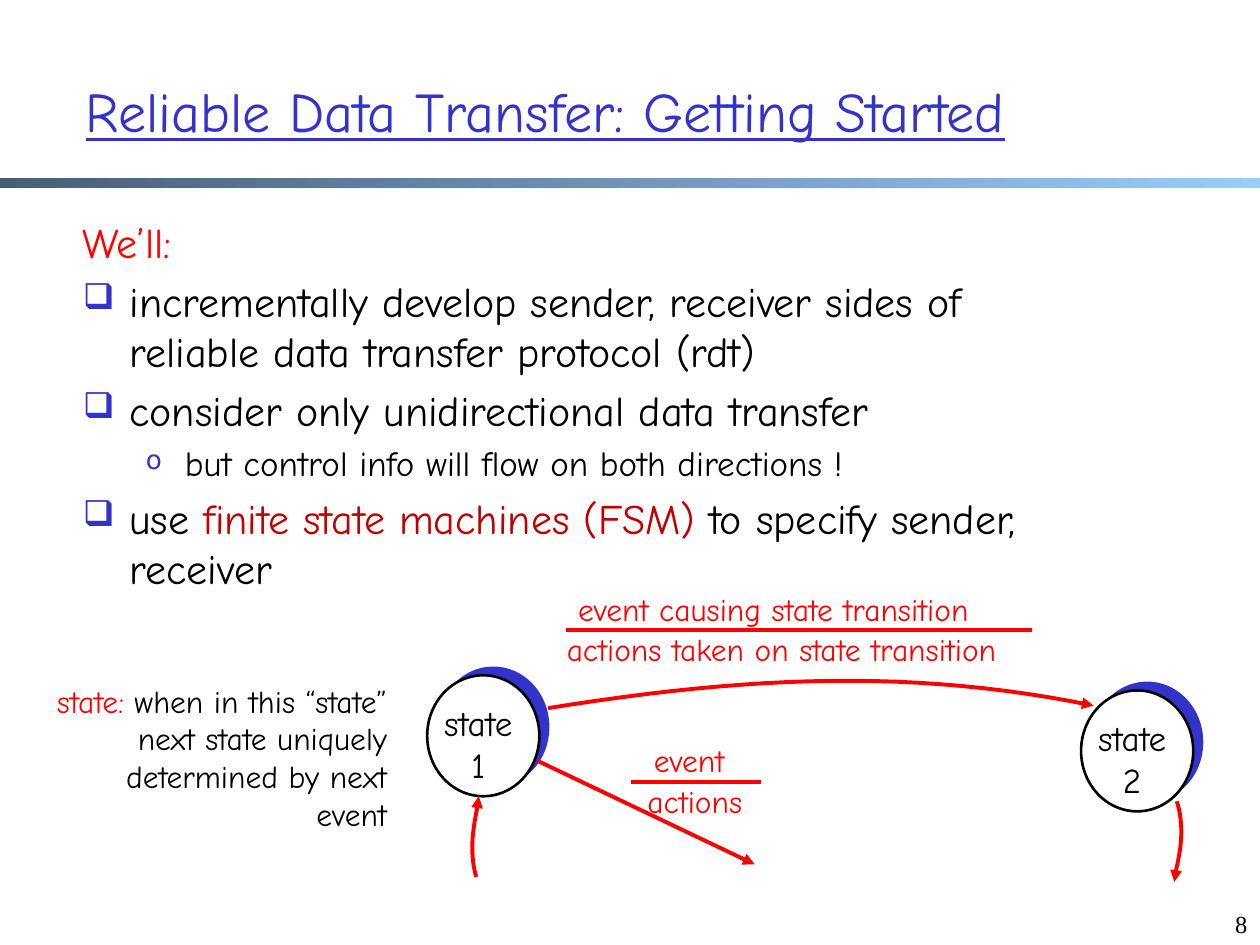
"""Builds the slide that introduces finite state machines for reliable data transfer."""
from lxml import etree
from pptx import Presentation
from pptx.dml.color import RGBColor
from pptx.enum.shapes import MSO_CONNECTOR, MSO_SHAPE
from pptx.enum.text import MSO_ANCHOR, MSO_AUTO_SIZE, PP_ALIGN
from pptx.oxml.ns import qn
from pptx.util import Inches, Pt

LEFT, CENTER, RIGHT = PP_ALIGN.LEFT, PP_ALIGN.CENTER, PP_ALIGN.RIGHT
TOP, MIDDLE, BOTTOM = MSO_ANCHOR.TOP, MSO_ANCHOR.MIDDLE, MSO_ANCHOR.BOTTOM
OVAL, RECT = MSO_SHAPE.OVAL, MSO_SHAPE.RECTANGLE
STRAIGHT = MSO_CONNECTOR.STRAIGHT
NO_FIT = MSO_AUTO_SIZE.NONE
FONT = "Comic Neue"
BLUE, RED, DARK_RED, BLACK, WHITE = "3333CC", "FF0000", "C00000", "000000", "FFFFFF"
color = RGBColor.from_string

prs = Presentation()
prs.slide_width, prs.slide_height = Inches(10), Inches(7.5)
col = row = prs.slide_width / 100
s = prs.slides.add_slide(prs.slide_layouts[5])


def write(sp, box, lines, size, align=LEFT, anchor=TOP, wrap=True, font=FONT):
    """Places a text shape and fills it with lines of (text, colour) runs."""
    sp.left, sp.top, sp.width, sp.height = [int(v * col) for v in box]
    tf = sp.text_frame
    tf.auto_size, tf.word_wrap, tf.vertical_anchor = NO_FIT, wrap, anchor
    for i, runs in enumerate(lines):
        p = tf.add_paragraph() if i else tf.paragraphs[0]
        p.alignment = align
        for text, hue in runs:
            r = p.add_run()
            r.text = text
            r.font.name, r.font.size = font, Pt(size)
            r.font.color.rgb = color(hue)
    return tf


def stroke(sp, arrow):
    """Gives a line its red pen, without shadow, and an optional arrowhead."""
    sp.line.color.rgb = color(RED)
    sp.line.width = Pt(2.25)
    if arrow:
        etree.SubElement(sp.line._ln, qn("a:tailEnd"), type="triangle")
    etree.SubElement(sp._element.spPr, qn("a:effectLst"))


bar = s.shapes.add_shape(RECT, 0, int(14.1 * row), prs.slide_width, int(0.8 * row))
bar.shadow.inherit = False
bar.line.fill.background()
bar.fill.gradient()
bar.fill.gradient_angle = 0
for stop, hue, position in zip(bar.fill.gradient_stops, ("475E76", "99CCFF"), (0, 1)):
    stop.color.rgb = color(hue)
    stop.position = position

tf = write(s.shapes.title, (5.8, 2.5, 85, 12.5),
           [[("Reliable Data Transfer: Getting Started", BLUE)]], 32, anchor=MIDDLE)
tf.paragraphs[0].runs[0].font.underline = True

write(s.shapes.add_textbox(0, 0, 0, 0), (76.7, 70, 23.3, 5), [[("8", BLACK)]], 14,
      RIGHT, BOTTOM, font="Times New Roman")

body = [
    [("We’ll:", RED)],
    [("incrementally develop sender, receiver sides of reliable data transfer protocol (rdt)", BLACK)],
    [("consider only unidirectional data transfer", BLACK)],
    [("but control info will flow on both directions !", BLACK)],
    [("use ", BLACK), ("finite state machines (FSM)", DARK_RED), (" to specify sender, receiver", BLACK)],
]
tf = write(s.shapes.add_textbox(0, 0, 0, 0), (5.6, 16.7, 79.4, 36.7), body, 24)
square, circle = ("❑", 85, 0.37, 0.37, 24), ("o", 75, 0.81, 0.31, 20)
plain = ("",) + square[1:]
for p, style in zip(tf.paragraphs, (plain, square, square, circle, square)):
    mark, percent, margin, hang, size = style
    p.space_before = Pt(size * 0.2)
    for r in p.runs:
        r.font.size = Pt(size)
    pPr = p._p.get_or_add_pPr()
    pPr.set("marL", str(Inches(margin)))
    pPr.set("indent", str(-Inches(hang)))
    if mark:
        etree.SubElement(etree.SubElement(pPr, qn("a:buClr")), qn("a:srgbClr"), val=BLUE)
        etree.SubElement(pPr, qn("a:buSzPct"), val=str(percent * 1000))
        etree.SubElement(pPr, qn("a:buChar"), char=mark)

for number, x, y in (("1", 33.9, 53.6), ("2", 85.8, 54.8)):
    for dx, dy, fill in ((0.8, -0.7, BLUE), (0, 0, WHITE)):
        sp = s.shapes.add_shape(OVAL, int((x + dx) * col), int((y + dy) * row),
                                int(8.9 * col), int(9.6 * row))
        sp.shadow.inherit = False
        sp.fill.solid()
        sp.fill.fore_color.rgb = color(fill)
        if fill == BLUE:
            sp.line.fill.background()
        else:
            sp.line.color.rgb = color(BLACK)
            sp.line.width = Pt(1.5)
    write(s.shapes.add_textbox(0, 0, 0, 0), (x - 0.4, y + 1.6, 8.9, 7.7),
          [[("state", BLACK)], [(number, BLACK)]], 20, CENTER, wrap=False)

labels = [
    ("event causing state transition", 44.9, 46.3, 36.7),
    ("actions taken on state transition", 44, 49.5, 40),
    ("event", 50.9, 58.3, 8.5),
    ("actions", 50.4, 61.6, 10.3),
]
for text, x, y, width in labels:
    write(s.shapes.add_textbox(0, 0, 0, 0), (x, y, width, 4), [[(text, RED)]], 18, wrap=False)

tf = write(s.shapes.add_textbox(0, 0, 0, 0), (1.4, 53.6, 30.3, 13.5),
           [[("state:", RED),
             (" when in this “state” next state uniquely determined by next event", BLACK)]],
           18, RIGHT)
p = tf.paragraphs[0]
p.space_before = Pt(3.6)
pPr = p._p.get_or_add_pPr()
pPr.set("marL", str(Inches(0.38)))
pPr.set("indent", str(-Inches(0.38)))

straight = [
    (44.9, 50, 81.9, 50, False),
    (50.1, 62.1, 60.4, 62.1, False),
    (42.7, 60.4, 59.9, 68.6, True),
]
for x1, y1, x2, y2, arrow in straight:
    stroke(s.shapes.add_connector(STRAIGHT, int(x1 * col), int(y1 * row),
                                  int(x2 * col), int(y2 * row)), arrow)

curves = [
    ((43.5, 56.2), (59.7, 53.6), (72.6, 53.1), (86.8, 56)),
    ((37.8, 69.6), (37, 66.8), (38, 64.2), (38, 63.2)),
    ((93.4, 63.6), (94.3, 66.5), (93.2, 69), (93.2, 70)),
]
STEPS = 24
for curve in curves:
    points = []
    for i in range(STEPS + 1):
        t = i / STEPS
        weights = ((1 - t) ** 3, 3 * t * (1 - t) ** 2, 3 * t * t * (1 - t), t ** 3)
        points.append(tuple(sum(w * c[k] for w, c in zip(weights, curve)) * col for k in (0, 1)))
    fb = s.shapes.build_freeform(*points[0])
    fb.add_line_segments(points[1:], close=False)
    sp = fb.convert_to_shape()
    sp.fill.background()
    stroke(sp, True)

prs.save("out.pptx")
